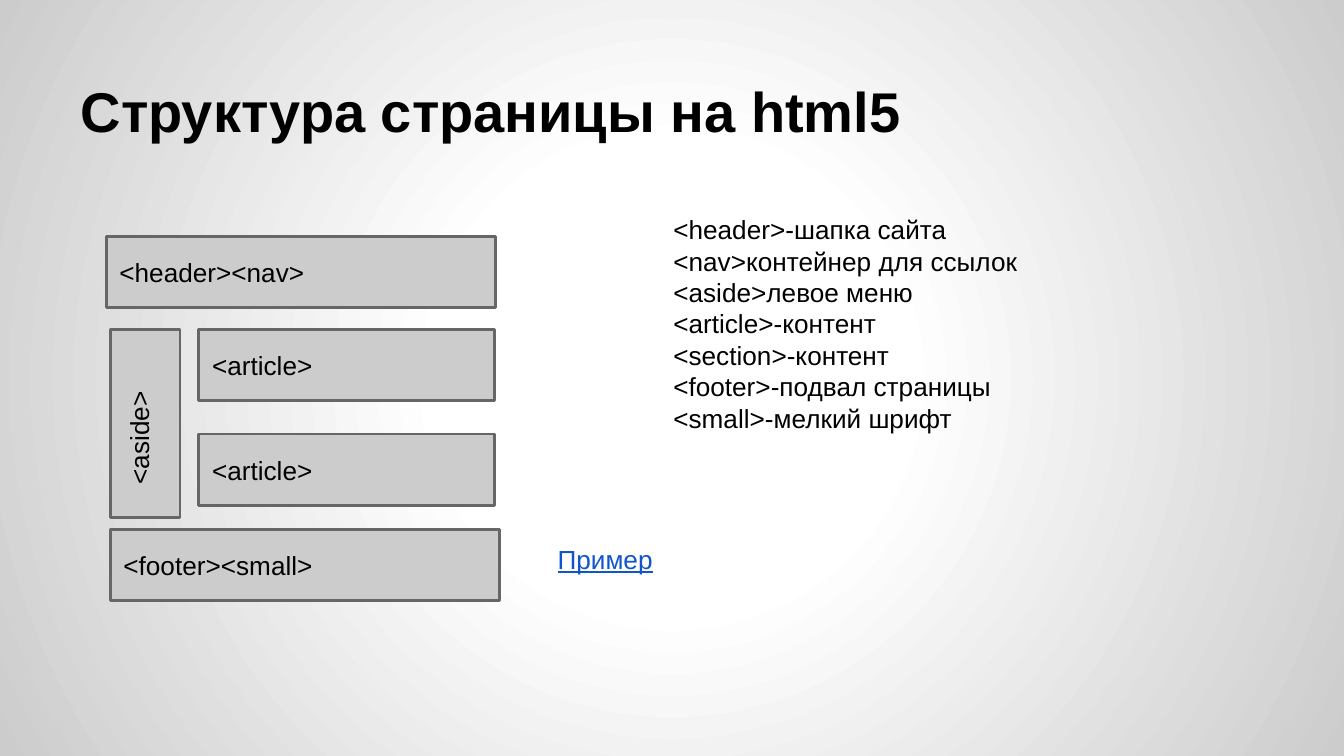
from dataclasses import dataclass

from pptx import Presentation
from pptx.dml.color import RGBColor
from pptx.enum.shapes import MSO_SHAPE
from pptx.enum.text import MSO_ANCHOR, MSO_AUTO_SIZE, PP_ALIGN
from pptx.oxml import parse_xml
from pptx.oxml.ns import nsdecls
from pptx.util import Inches, Pt

RECT = MSO_SHAPE.RECTANGLE
TOP, MIDDLE, BOTTOM = MSO_ANCHOR.TOP, MSO_ANCHOR.MIDDLE, MSO_ANCHOR.BOTTOM
LEFT = PP_ALIGN.LEFT
NO_FIT = MSO_AUTO_SIZE.NONE


@dataclass(frozen=True)
class Theme:
    font: str = "Arial"
    title_size: int = 30
    text_size: int = 14
    text: str = "000000"
    link: str = "1155CC"
    block: str = "CCCCCC"
    border: str = "666666"
    center: str = "FFFFFF"
    edge: str = "CCCCCC"


THEME = Theme()
ROW_H = 0.53
ROW_W = 2.9
ARTICLE_W = 2.2
MIDDLE_TOP = 2.45
BLOCKS = [
    ("<header><nav>", 0.79, 1.76, ROW_W, ROW_H),
    ("", 0.82, MIDDLE_TOP, 0.52, 1.4),
    ("<footer><small>", 0.82, 3.94, ROW_W, ROW_H),
    ("<article>", 1.48, MIDDLE_TOP, ARTICLE_W, ROW_H),
    ("<article>", 1.48, MIDDLE_TOP + 0.78, ARTICLE_W, ROW_H),
]
TAGS = [
    "<header>-шапка сайта",
    "<nav>контейнер для ссылок",
    "<aside>левое меню",
    "<article>-контент",
    "<section>-контент",
    "<footer>-подвал страницы",
    "<small>-мелкий шрифт",
]


def set_background(s):
    bg = parse_xml(
        f'<p:bg {nsdecls("p", "a")}><p:bgPr><a:gradFill rotWithShape="1"><a:gsLst>'
        f'<a:gs pos="0"><a:srgbClr val="{THEME.center}"/></a:gs>'
        f'<a:gs pos="30000"><a:srgbClr val="{THEME.center}"/></a:gs>'
        f'<a:gs pos="100000"><a:srgbClr val="{THEME.edge}"/></a:gs></a:gsLst>'
        '<a:path path="circle">'
        '<a:fillToRect l="50000" t="50000" r="50000" b="50000"/></a:path>'
        '</a:gradFill><a:effectLst/></p:bgPr></p:bg>'
    )
    s.element.cSld.insert(0, bg)


def place(sp, x, y, w, h):
    sp.left, sp.top, sp.width, sp.height = map(Inches, (x, y, w, h))


def write(sp, lines, anchor=TOP, size=THEME.text_size, color=THEME.text,
          bold=False, underline=False):
    tf = sp.text_frame
    tf.word_wrap = True
    tf.auto_size = NO_FIT
    tf.vertical_anchor = anchor
    tf.margin_left = tf.margin_right = Inches(0.1)
    tf.margin_top = tf.margin_bottom = Inches(0.1)
    tf.text = "\n".join(lines)
    for p in tf.paragraphs:
        p.alignment = LEFT
        p.font.name = THEME.font
        p.font.size = Pt(size)
        p.font.bold = bold
        p.font.underline = underline
        p.font.color.rgb = RGBColor.from_string(color)


def add_title(s, text):
    sp = s.shapes.title
    place(sp, 0.5, 0.23, 9, 0.94)
    write(sp, [text], BOTTOM, THEME.title_size, bold=True)


def add_tag_list(s, lines):
    sp = s.placeholders[1]
    place(sp, 4.91, 1.49, 4.59, 3.9)
    write(sp, lines)
    for p in sp.text_frame.paragraphs:
        p.space_before = Pt(0)
        p.line_spacing = 1.0
        pPr = p._p.get_or_add_pPr()
        pPr.set("marL", "0")
        pPr.set("indent", "0")
        bullet = parse_xml(f'<a:buNone {nsdecls("a")}/>')
        pPr.insert_element_before(bullet, "a:tabLst", "a:defRPr", "a:extLst")


def add_block(s, text, x, y, w, h):
    sp = s.shapes.add_shape(RECT, *map(Inches, (x, y, w, h)))
    sp.shadow.inherit = False
    sp.fill.solid()
    sp.fill.fore_color.rgb = RGBColor.from_string(THEME.block)
    sp.line.color.rgb = RGBColor.from_string(THEME.border)
    sp.line.width = Pt(1.5)
    if text:
        write(sp, [text], MIDDLE)


def add_label(s, text, x, y, w, h, rotation=0, **style):
    sp = s.shapes.add_textbox(*map(Inches, (x, y, w, h)))
    sp.rotation = rotation
    write(sp, [text], **style)


def main():
    prs = Presentation()
    prs.slide_width = Inches(10)
    prs.slide_height = prs.slide_width * 9 // 16
    s = prs.slides.add_slide(prs.slide_layouts[1])
    set_background(s)
    add_title(s, "Структура страницы на html5")
    add_tag_list(s, TAGS)
    for block in BLOCKS:
        add_block(s, *block)
    add_label(s, "<aside>", 0.53, 2.89, 1.1, ROW_H, rotation=270)
    add_label(s, "Пример", 4.05, 3.94, 1.69, ROW_H,
              color=THEME.link, underline=True)
    prs.save("out.pptx")


if __name__ == "__main__":
    main()
